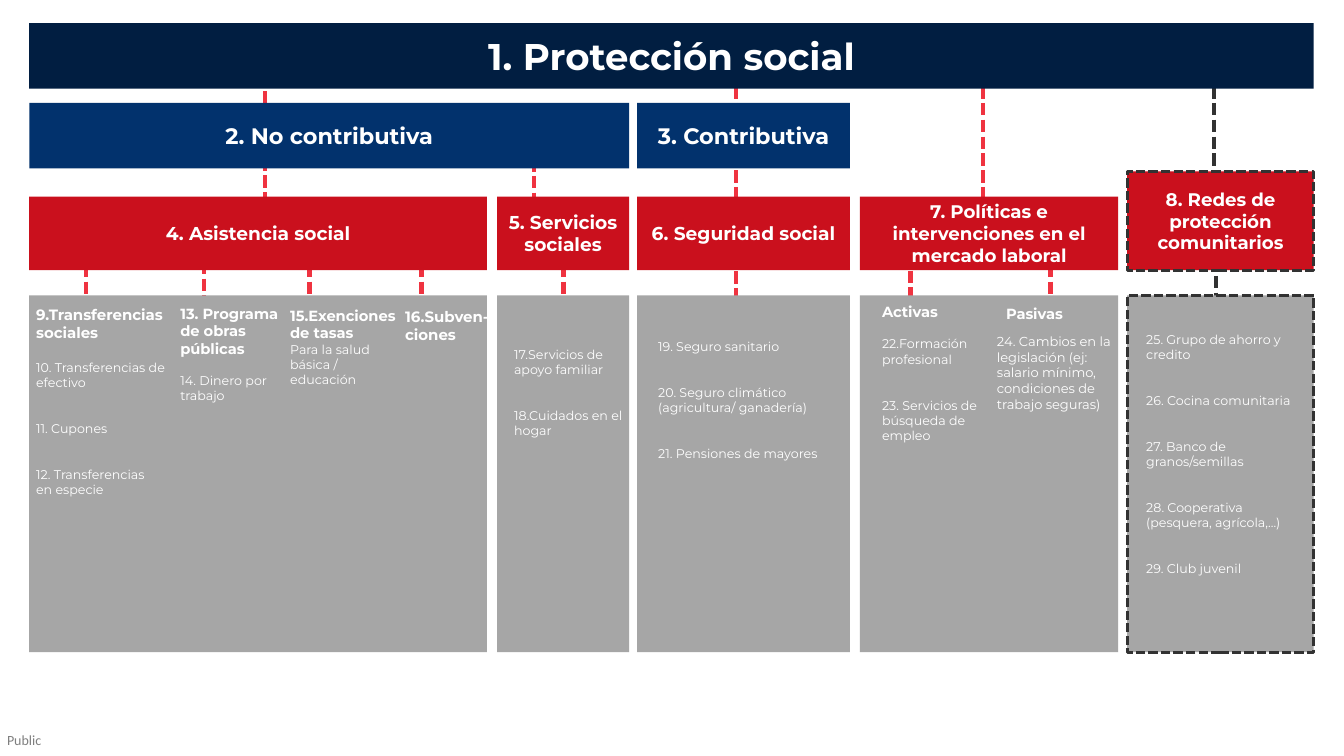
import pptx
import pptx.util
import pptx.dml.color
import pptx.enum.dml
import pptx.enum.shapes
import pptx.enum.text
import pptx.oxml.ns
import lxml.etree

WIDTH, HEIGHT = 13.33, 7.5
NAVY, BLUE, RED, GRAY = "011E41", "02326D", "CA101D", "A6A6A6"
BRIGHT_RED, CHARCOAL, WHITE = "EF3340", "323232", "FFFFFF"
FONT = "Montserrat"
LINE_PITCH = 11

ROWS = {
    "title": (0.23, 0.65),
    "branch": (1.02, 0.65),
    "program": (1.95, 0.73),
    "community": (1.7, 0.98),
    "detail": (2.93, 3.54),
}
COLUMNS = {
    "assistance": (0.29, 4.54),
    "services": (4.93, 1.31),
    "security": (6.32, 2.11),
    "labour": (8.53, 2.56),
    "community": (11.18, 1.85),
}

HEADERS = [
    ("1. Protección social", "assistance", "community", "title", NAVY, 26.5),
    ("2. No contributiva", "assistance", "services", "branch", BLUE, 16),
    ("3. Contributiva", "security", "security", "branch", BLUE, 16),
    ("4. Asistencia social", "assistance", "assistance", "program", RED, 13.3),
    ("5. Servicios sociales", "services", "services", "program", RED, 13.3),
    ("6. Seguridad social", "security", "security", "program", RED, 13.3),
    ("7. Políticas e intervenciones en el mercado laboral", "labour", "labour", "program", RED, 13),
    ("8. Redes de protección comunitarios", "community", "community", "community", RED, 13),
]

LINKS = [
    (5.59, 2.46, 3.57, BRIGHT_RED),
    (12.04, 0.52, 2.43, CHARCOAL),
    (2.63, 0.57, 2.46, BRIGHT_RED),
    (7.3, 0.52, 3.54, BRIGHT_RED),
    (9.75, 0.52, 2.35, BRIGHT_RED),
    (9.03, 2.35, 4.12, BRIGHT_RED),
    (10.42, 2.46, 4.23, BRIGHT_RED),
    (5.3, 1.41, 2.52, BRIGHT_RED),
    (0.85, 2.46, 3.57, BRIGHT_RED),
    (2.02, 2.43, 3.54, BRIGHT_RED),
    (3.07, 2.46, 3.57, BRIGHT_RED),
    (4.18, 2.46, 3.57, BRIGHT_RED),
    (12.06, 2.57, 3.68, CHARCOAL),
]

LISTS = [
    (0.26, 2.98, 1.48, 2, "9.Transferencias sociales", 10.7, 13, 9,
     ["10. Transferencias de efectivo", "11. Cupones", "12. Transferencias\ven especie"]),
    (1.69, 2.97, 1.23, 1.39, "13. Programa de obras públicas", 10.5, LINE_PITCH, 9,
     ["14. Dinero por trabajo"]),
    (2.78, 2.99, 1.27, 0.91, "15.Exenciones de tasas", 10.5, 0, 9,
     ["Para la salud básica / educación"]),
    (3.92, 3, 1.06, 0.61, "16.Subven-\vciones", 10.7, 0, 9, []),
    (5, 3.39, 1.41, 1.17, None, 0, 0, 9,
     ["17.Servicios de apoyo familiar", "18.Cuidados en el\u00a0hogar".replace("\u00a0", " ")]),
    (6.43, 3.31, 1.93, 1.47, None, 0, 0, 9,
     ["19. Seguro sanitario", "20. Seguro climático (agricultura/ ganadería)",
      "21. Pensiones de mayores"]),
    (8.65, 2.96, 1.17, 1.49, "Activas", 10.5, LINE_PITCH, 9,
     ["22.Formación profesional", "23. Servicios de búsqueda de empleo"]),
    (9.88, 2.97, 1.23, 0.29, "Pasivas", 10.5, 0, 9, []),
    (9.79, 3.26, 1.46, 0.89, None, 0, 0, 9.3,
     ["24. Cambios en la legislación (ej: salario mínimo, condiciones de trabajo seguras)"]),
    (11.27, 3.24, 1.7, 2.68, None, 0, 0, 9,
     ["25. Grupo de ahorro y credito", "26. Cocina comunitaria", "27. Banco de granos/semillas",
      "28. Cooperativa (pesquera, agrícola,…)", "29. Club juvenil"]),
]


def color(value):
    return pptx.dml.color.RGBColor.from_string(value)


def inches(*values):
    return [pptx.util.Inches(value) for value in values]


def style_font(paragraph, size, bold=False, value=WHITE, name=FONT):
    paragraph.font.name = name
    paragraph.font.size = pptx.util.Pt(size)
    paragraph.font.bold = bold
    paragraph.font.color.rgb = color(value)


def dash(line, value, width):
    line.color.rgb = color(value)
    line.width = pptx.util.Pt(width)
    line.dash_style = pptx.enum.dml.MSO_LINE.SQUARE_DOT


def add_link(slide, x, top, bottom, value):
    connector = slide.shapes.add_connector(
        pptx.enum.shapes.MSO_CONNECTOR.STRAIGHT, *inches(x, top, x, bottom))
    dash(connector.line, value, 3)
    lxml.etree.SubElement(connector._element.spPr, pptx.oxml.ns.qn("a:effectLst"))


def add_block(slide, first, last, row, fill):
    left = COLUMNS[first][0]
    right = sum(COLUMNS[last])
    top, height = ROWS[row]
    shape = slide.shapes.add_shape(
        pptx.enum.shapes.MSO_SHAPE.RECTANGLE, *inches(left, top, right - left, height))
    shape.shadow.inherit = False
    shape.fill.solid()
    shape.fill.fore_color.rgb = color(fill)
    if first == "community":
        dash(shape.line, CHARCOAL, 2.25)
    else:
        shape.line.fill.background()
    return shape


def add_header(slide, text, first, last, row, fill, size):
    frame = add_block(slide, first, last, row, fill).text_frame
    frame.word_wrap = True
    frame.vertical_anchor = pptx.enum.text.MSO_ANCHOR.MIDDLE
    paragraph = frame.paragraphs[0]
    paragraph.text = text
    paragraph.alignment = pptx.enum.text.PP_ALIGN.CENTER
    style_font(paragraph, size, True)


def add_list(slide, left, top, width, height, heading, heading_size, heading_gap, size, items):
    frame = slide.shapes.add_textbox(*inches(left, top, width, height)).text_frame
    frame.word_wrap = True
    entries = [(heading, heading_size, True, 0)] if heading else []
    for index, item in enumerate(items):
        entries.append((item, size, False, 2 * LINE_PITCH if index else heading_gap))
    for index, (text, text_size, bold, gap) in enumerate(entries):
        paragraph = frame.add_paragraph() if index else frame.paragraphs[0]
        paragraph.text = text
        if gap:
            paragraph.space_before = pptx.util.Pt(gap)
        style_font(paragraph, text_size, bold)


def add_label(slide):
    frame = slide.shapes.add_textbox(*inches(0.07, 7.26, 0.37, 0.17)).text_frame
    frame.margin_left = frame.margin_right = frame.margin_top = frame.margin_bottom = 0
    frame.paragraphs[0].text = "Public"
    style_font(frame.paragraphs[0], 10, value="7F7F7F", name="Calibri")


def main():
    presentation = pptx.Presentation()
    presentation.slide_width, presentation.slide_height = inches(WIDTH, HEIGHT)
    slide = presentation.slides.add_slide(presentation.slide_layouts[6])
    add_label(slide)
    for link in LINKS:
        add_link(slide, *link)
    for column in COLUMNS:
        add_block(slide, column, column, "detail", GRAY)
    for header in HEADERS:
        add_header(slide, *header)
    for entry in LISTS:
        add_list(slide, *entry)
    presentation.save("out.pptx")


if __name__ == "__main__":
    main()
